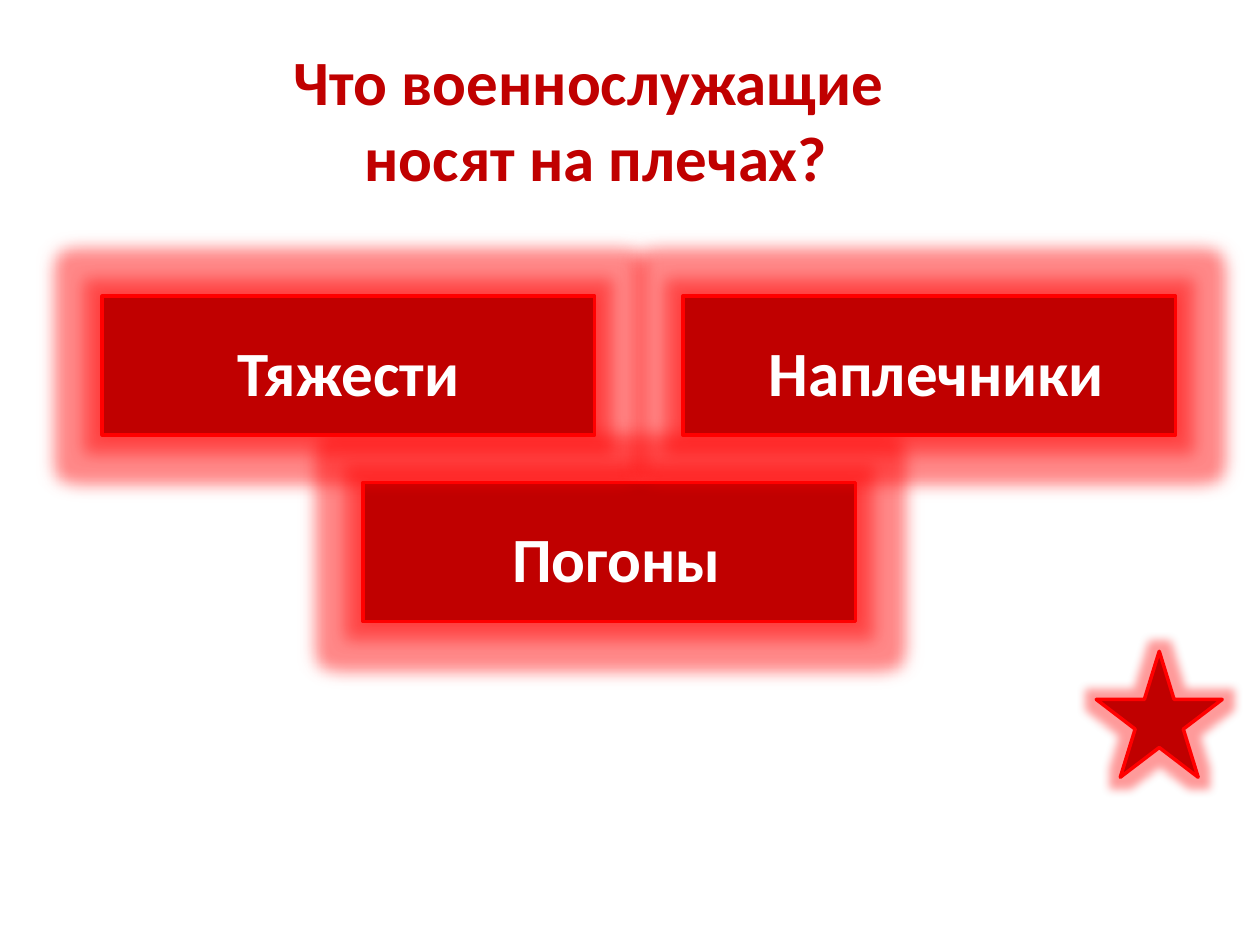
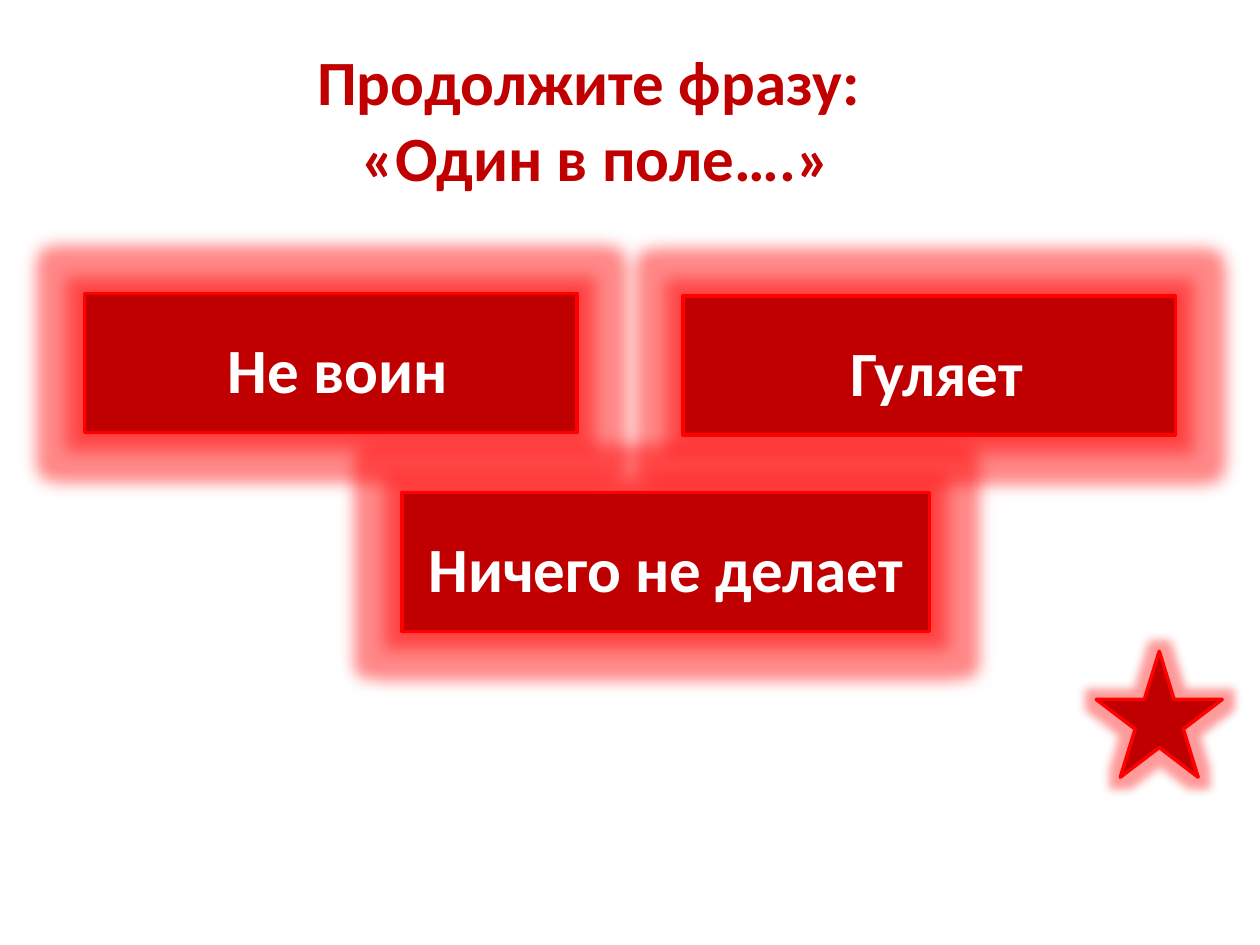
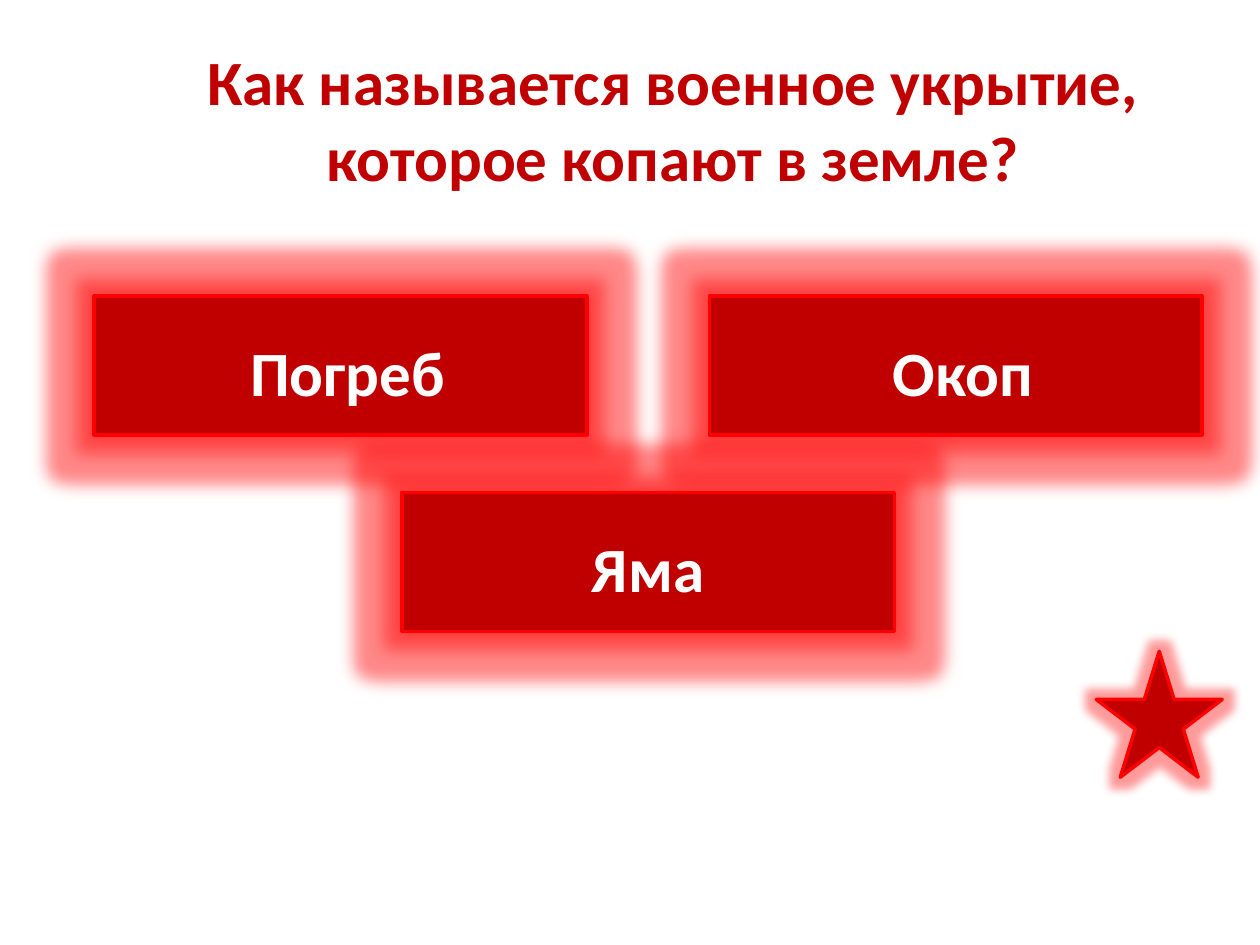
from collections import namedtuple
from dataclasses import dataclass

from lxml import etree
from pptx import Presentation
from pptx.dml.color import RGBColor
from pptx.enum import shapes, text
from pptx.oxml import ns
from pptx.util import Cm, Pt


@dataclass(frozen=True)
class Theme:
    font: str = "Calibri"
    size: int = 36
    dark_red: str = "C00000"
    bright_red: str = "FF0000"
    white: str = "FFFFFF"
    outline: int = 2
    answer_glow: int = 18
    star_glow: int = 11
    halo_blur: int = 8
    opacity: int = 40


Box = namedtuple("Box", "left top width height")
Answer = namedtuple("Answer", "label left top width")
Quiz = namedtuple("Quiz", "question question_left answers")

THEME = Theme()
SLIDE_WIDTH, SLIDE_HEIGHT = 25.4, 19.05
QUESTION_TOP, QUESTION_WIDTH, QUESTION_HEIGHT = 0.74, 19.41, 3.33
ANSWER_WIDTH, ANSWER_HEIGHT = 9.93, 2.8
UPPER_ROW, LOWER_ROW = 5.97, 9.93
STAR = Box(22.1, 13.13, 2.54, 2.54)

QUIZZES = (
    Quiz(("Что военнослужащие ", "носят на плечах?"), 2.31, (
        Answer(" Погоны", 7.32, 9.73, ANSWER_WIDTH),
        Answer("Тяжести", 2.06, UPPER_ROW, ANSWER_WIDTH),
        Answer(" Наплечники", 13.77, UPPER_ROW, ANSWER_WIDTH),
    )),
    Quiz(("Продолжите фразу: ", "«Один в поле….»"), 2.31, (
        Answer(" Не воин", 1.7, 5.92, ANSWER_WIDTH),
        Answer("Ничего не делает", 8.1, LOWER_ROW, 10.64),
        Answer(" Гуляет", 13.77, UPPER_ROW, ANSWER_WIDTH),
    )),
    Quiz(("Как называется военное укрытие, которое копают в земле?",), 3.86, (
        Answer(" Окоп", 14.3, UPPER_ROW, ANSWER_WIDTH),
        Answer("Яма", 8.1, LOWER_ROW, ANSWER_WIDTH),
        Answer(" Погреб", 1.9, UPPER_ROW, ANSWER_WIDTH),
    )),
)


def lengths(box):
    return [Cm(value) for value in box]


def add_effect(effects, tag, **attributes):
    effect = etree.SubElement(effects, ns.qn(tag), attributes)
    color = etree.SubElement(effect, ns.qn("a:srgbClr"), val=THEME.bright_red)
    etree.SubElement(color, ns.qn("a:alpha"), val=str(THEME.opacity * 1000))


def add_glowing_shape(slide, kind, box, glow):
    shape = slide.shapes.add_shape(kind, *lengths(box))
    shape.shadow.inherit = False
    shape.fill.solid()
    shape.fill.fore_color.rgb = RGBColor.from_string(THEME.dark_red)
    shape.line.color.rgb = RGBColor.from_string(THEME.bright_red)
    shape.line.width = Pt(THEME.outline)
    effects = shape.element.spPr.find(ns.qn("a:effectLst"))
    add_effect(effects, "a:glow", rad=str(Pt(glow)))
    return shape, effects


def style_paragraph(paragraph, color):
    paragraph.alignment = text.PP_ALIGN.CENTER
    paragraph.font.name = THEME.font
    paragraph.font.size = Pt(THEME.size)
    paragraph.font.bold = True
    paragraph.font.color.rgb = RGBColor.from_string(color)


def add_question(slide, box, lines):
    frame = slide.shapes.add_textbox(*lengths(box)).text_frame
    frame.word_wrap = True
    frame.auto_size = text.MSO_AUTO_SIZE.SHAPE_TO_FIT_TEXT
    frame.text = "\n".join(lines)
    for paragraph in frame.paragraphs:
        style_paragraph(paragraph, THEME.dark_red)


def add_answer(slide, box, label):
    shape, effects = add_glowing_shape(
        slide, shapes.MSO_SHAPE.RECTANGLE, box, THEME.answer_glow)
    add_effect(effects, "a:outerShdw", blurRad=str(Pt(THEME.halo_blur)),
               dist="0", dir="0", algn="ctr", rotWithShape="0")
    frame = shape.text_frame
    frame.word_wrap = True
    frame.vertical_anchor = text.MSO_ANCHOR.MIDDLE
    frame.text = label
    paragraph = frame.paragraphs[0]
    paragraph.line_spacing = 1.15
    paragraph.space_after = Pt(10)
    style_paragraph(paragraph, THEME.white)


def add_quiz_slide(presentation, quiz):
    slide = presentation.slides.add_slide(presentation.slide_layouts[6])
    for answer in quiz.answers:
        box = Box(answer.left, answer.top, answer.width, ANSWER_HEIGHT)
        add_answer(slide, box, answer.label)
    question_box = Box(quiz.question_left, QUESTION_TOP, QUESTION_WIDTH, QUESTION_HEIGHT)
    add_question(slide, question_box, quiz.question)
    add_glowing_shape(slide, shapes.MSO_SHAPE.STAR_5_POINT, STAR, THEME.star_glow)


def main():
    presentation = Presentation()
    presentation.slide_width = Cm(SLIDE_WIDTH)
    presentation.slide_height = Cm(SLIDE_HEIGHT)
    for quiz in QUIZZES:
        add_quiz_slide(presentation, quiz)
    presentation.save("out.pptx")


if __name__ == "__main__":
    main()
